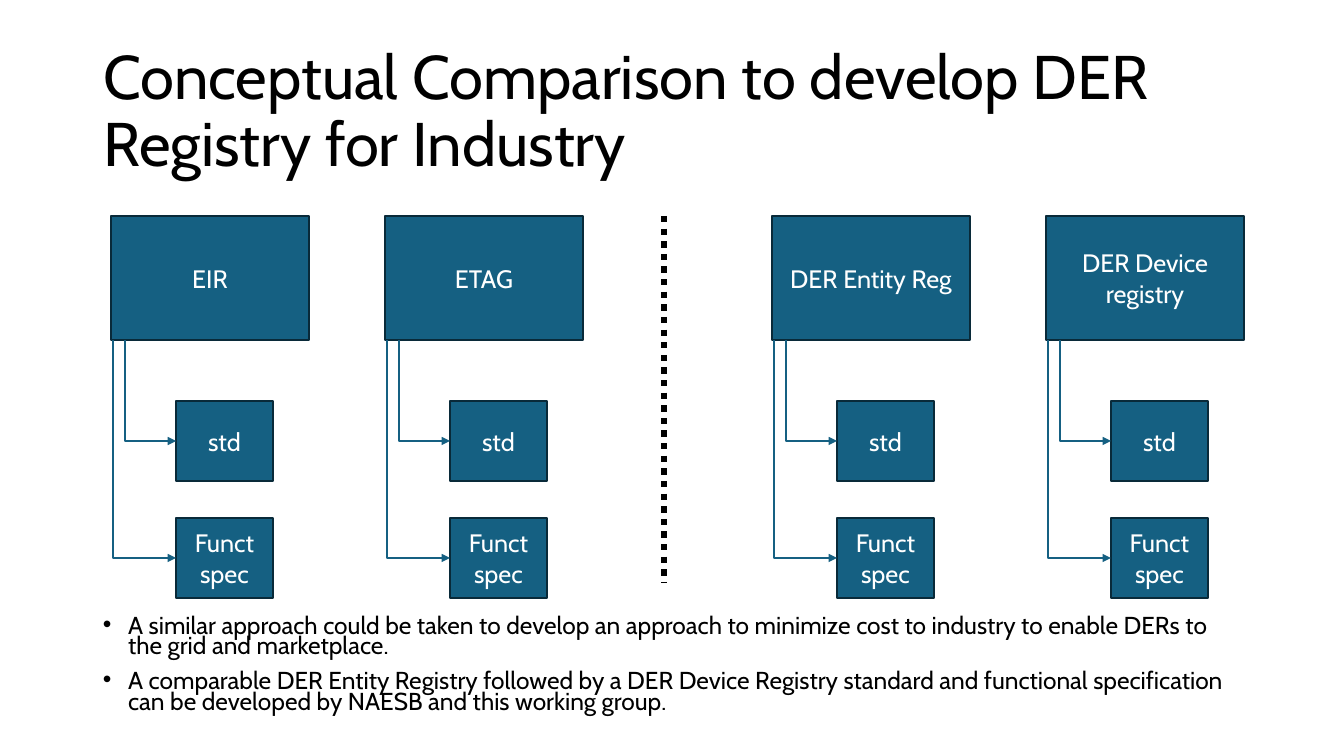
from lxml import etree
from pptx import Presentation
from pptx.dml.color import RGBColor
from pptx.enum.dml import MSO_LINE
from pptx.enum.shapes import MSO_CONNECTOR, MSO_SHAPE
from pptx.enum.text import MSO_ANCHOR, MSO_AUTO_SIZE, PP_ALIGN
from pptx.oxml.ns import qn
from pptx.util import Emu, Pt

RECTANGLE = MSO_SHAPE.RECTANGLE
STRAIGHT, ELBOW = MSO_CONNECTOR.STRAIGHT, MSO_CONNECTOR.ELBOW
LEFT, CENTER = PP_ALIGN.LEFT, PP_ALIGN.CENTER
TOP, MIDDLE = MSO_ANCHOR.TOP, MSO_ANCHOR.MIDDLE
NO_FIT, DOTTED = MSO_AUTO_SIZE.NONE, MSO_LINE.ROUND_DOT
TITLE_ONLY = 5
EMU_PER_PX = 914400 / 100.8


def px(length):
    return Emu(round(length * EMU_PER_PX))


def color(hex_value):
    return RGBColor.from_string(hex_value)


def assign(target, values):
    for name, value in values.items():
        setattr(target, name, value)


class RegistrySlide:
    FONT = "Cabin"
    TEAL, NAVY, BLACK, WHITE = "156082", "092A39", "000000", "FFFFFF"

    def __init__(self, presentation):
        self.slide = presentation.slides.add_slide(presentation.slide_layouts[TITLE_ONLY])
        self.shapes = self.slide.shapes

    def fill_text(self, shape, texts, size, ink, anchor, paragraph_format, bullet=False):
        frame = shape.text_frame
        assign(frame, {"word_wrap": True, "auto_size": NO_FIT, "vertical_anchor": anchor})
        for index, text in enumerate(texts):
            paragraph = frame.add_paragraph() if index else frame.paragraphs[0]
            if bullet:
                properties = paragraph._p.get_or_add_pPr()
                properties.set("marL", "228600")
                properties.set("indent", "-228600")
                etree.SubElement(properties, qn("a:buFont")).set("typeface", "Arial")
                etree.SubElement(properties, qn("a:buChar")).set("char", "•")
            assign(paragraph, paragraph_format)
            paragraph.space_before = Pt(10 if index else 0)
            run = paragraph.add_run()
            run.text = text
            assign(run.font, {"name": self.FONT, "size": Pt(size)})
            run.font.color.rgb = color(ink)

    def title(self, text, left, top, width, height):
        heading = self.shapes.title
        assign(heading, {"left": px(left), "top": px(top),
                         "width": px(width), "height": px(height)})
        self.fill_text(heading, [text], 44, self.BLACK, MIDDLE,
                       {"alignment": LEFT, "line_spacing": 0.9})

    def bullets(self, texts, left, top, width, height):
        summary = self.shapes.add_textbox(px(left), px(top), px(width), px(height))
        self.fill_text(summary, texts, 17.5, self.BLACK, TOP,
                       {"alignment": LEFT, "line_spacing": 0.7}, bullet=True)

    def box(self, text, left, top, width, height):
        block = self.shapes.add_shape(RECTANGLE, px(left), px(top), px(width), px(height))
        block.shadow.inherit = False
        block.fill.solid()
        block.fill.fore_color.rgb = color(self.TEAL)
        block.line.color.rgb = color(self.NAVY)
        block.line.width = Pt(1.5)
        self.fill_text(block, [text], 18, self.WHITE, MIDDLE, {"alignment": CENTER})

    def line(self, kind, x1, y1, x2, y2, ink, weight):
        connector = self.shapes.add_connector(kind, px(x1), px(y1), px(x2), px(y2))
        connector.line.color.rgb = color(ink)
        connector.line.width = Pt(weight)
        etree.SubElement(connector.element.spPr, qn("a:effectLst"))
        return connector

    def divider(self, x, top, bottom):
        self.line(STRAIGHT, x, top, x, bottom, self.BLACK, 4.5).line.dash_style = DOTTED

    def branch(self, x1, y1, x2, y2):
        """Arrow that runs down, then right: a one-bend connector turned by 270 degrees."""
        across, down = x2 - x1, y2 - y1
        left, top = (x1 + x2 - down) / 2, (y1 + y2 - across) / 2
        arrow = self.line(ELBOW, left, top, left + down, top + across, self.TEAL, 1.5)
        properties = arrow.element.spPr
        properties.find(qn("a:prstGeom")).set("prst", "bentConnector2")
        frame = properties.find(qn("a:xfrm"))
        frame.set("rot", "16200000")
        frame.set("flipH", "1")
        outline = properties.find(qn("a:ln"))
        etree.SubElement(outline, qn("a:tailEnd")).set("type", "triangle")


def main():
    presentation = Presentation()
    assign(presentation, {"slide_width": px(1344), "slide_height": px(756)})
    page = RegistrySlide(presentation)
    page.title("Conceptual Comparison to develop DER Registry for Industry", 93, 40, 1159, 146)

    # Registries, each with its standard and functional specification
    registry_top, registry_height, part_height = 216, 124, 80
    registries = [("EIR", 111), ("ETAG", 385),
                  ("DER Entity Reg", 772), ("DER Device registry", 1046)]
    parts = [("std", 401, 14), ("Funct spec", 518, 2)]
    for registry, left in registries:
        page.box(registry, left, registry_top, 198, registry_height)
        for part, part_top, branch_offset in parts:
            page.box(part, left + 65, part_top, 97, part_height)
            page.branch(left + branch_offset, registry_top + registry_height,
                        left + 65, part_top + part_height // 2)

    # Divider between existing and proposed registries
    page.divider(664, registry_top, 582)

    # Summary
    page.bullets([
        "A similar approach could be taken to develop an approach to minimize cost "
        "to industry to enable DERs to the grid and marketplace.",
        "A comparable DER Entity Registry followed by a DER Device Registry standard and "
        "functional specification can be developed by NAESB and this working group.",
    ], 93, 613, 1159, 116)
    presentation.save("out.pptx")


if __name__ == "__main__":
    main()
